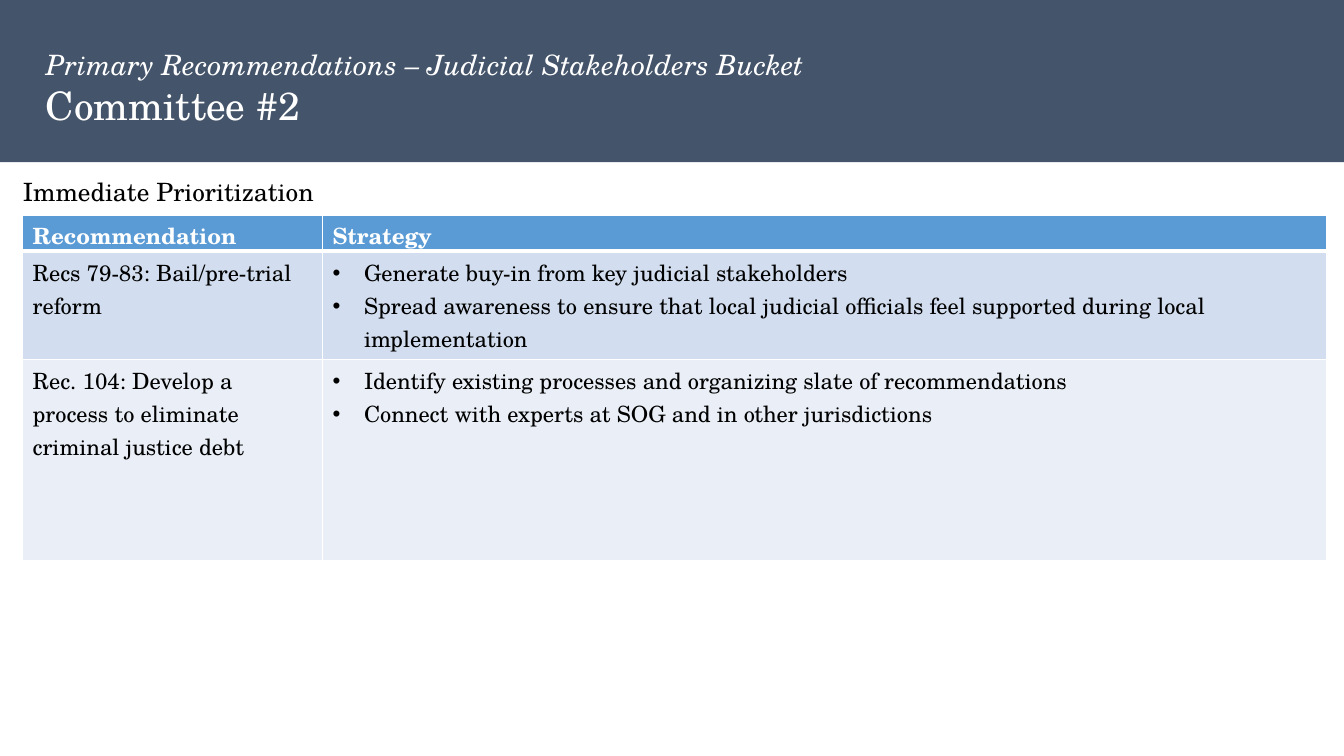
from lxml.etree import SubElement
from pptx import Presentation
from pptx.dml.color import RGBColor
from pptx.enum.shapes import MSO_SHAPE
from pptx.oxml.ns import qn
from pptx.util import Cm, Pt

# Content (a no-break space keeps "local implementation" on one line)
TITLE_LINES = [
    ("Primary Recommendations – Judicial Stakeholders Bucket", 20, True),
    ("Committee #2", 28, False),
]
SUBTITLE = "Immediate Prioritization"
HEADINGS = ["Recommendation", "Strategy"]
RECOMMENDATIONS = [
    ("Recs 79-83: Bail/pre-trial reform", [
        "Generate buy-in from key judicial stakeholders",
        "Spread awareness to ensure that local judicial officials feel supported during local implementation",
    ]),
    ("Rec. 104: Develop a process to eliminate criminal justice debt", [
        "Identify existing processes and organizing slate of recommendations",
        "Connect with experts at SOG and in other jurisdictions",
    ]),
]

# Style
FONT = "TeX Gyre Schola"
COLORS = {"banner": "44546A", "heading": "5B9BD5", "odd": "D2DEEF",
          "even": "EAEFF7", "white": "FFFFFF", "black": "000000"}
COLUMN_WIDTHS = [Cm(7.56), Cm(25.3)]
ROW_HEIGHTS = [Cm(0.89), Cm(2.72), Cm(5.08)]
BULLET_INDENT = Cm(0.79)


def color(name):
    return RGBColor.from_string(COLORS[name])


def add_span(para, text, size, ink, bold=False, italic=False):
    span = para.add_run()
    span.text = text
    span.font.name = FONT
    span.font.size = Pt(size)
    span.font.bold = bold
    span.font.italic = italic
    span.font.color.rgb = color(ink)


def add_bullet(para):
    properties = para._p.get_or_add_pPr()
    properties.set("marL", str(BULLET_INDENT))
    properties.set("indent", str(-BULLET_INDENT))
    SubElement(properties, qn("a:buFont")).set("typeface", "Arial")
    SubElement(properties, qn("a:buChar")).set("char", "•")


def add_borders(cell, widths):
    properties = cell._tc.get_or_add_tcPr()
    for position, (side, points) in enumerate(widths.items()):
        line = properties.makeelement(qn(f"a:ln{side}"), {"w": str(Pt(points))})
        fill = SubElement(line, qn("a:solidFill"))
        SubElement(fill, qn("a:srgbClr")).set("val", COLORS["white"])
        properties.insert(position, line)


def fill_cell(cell, lines, fill, ink, widths, bold=False, bulleted=False):
    cell.fill.solid()
    cell.fill.fore_color.rgb = color(fill)
    add_borders(cell, widths)
    frame = cell.text_frame
    for index, text in enumerate(lines):
        para = frame.add_paragraph() if index else frame.paragraphs[0]
        if bulleted:
            add_bullet(para)
        add_span(para, text, 16, ink, bold)


deck = Presentation()
deck.slide_width, deck.slide_height = Cm(33.87), Cm(19.05)
page = deck.slides.add_slide(deck.slide_layouts[6])

# Banner
banner = page.shapes.add_shape(MSO_SHAPE.RECTANGLE, 0, 0, deck.slide_width, Cm(4.09))
banner.shadow.inherit = False
banner.fill.solid()
banner.fill.fore_color.rgb = color("banner")
banner.line.fill.background()

# Title
title = page.shapes.add_textbox(Cm(0.91), Cm(1.07), Cm(19.81), Cm(2.31)).text_frame
title.word_wrap = False
for index, (text, size, italic) in enumerate(TITLE_LINES):
    para = title.add_paragraph() if index else title.paragraphs[0]
    add_span(para, text, size, "white", italic=italic)

# Table
table = page.shapes.add_table(
    len(ROW_HEIGHTS), len(COLUMN_WIDTHS), Cm(0.57), Cm(5.44),
    sum(COLUMN_WIDTHS), sum(ROW_HEIGHTS)).table
for column, width in zip(table.columns, COLUMN_WIDTHS):
    column.width = width
for row, height in zip(table.rows, ROW_HEIGHTS):
    row.height = height

for index, heading in enumerate(HEADINGS):
    cell = table.cell(0, index)
    cell.margin_top, cell.margin_bottom = Cm(0.05), 0
    fill_cell(cell, [heading], "heading", "white",
              {"L": 1, "R": 1, "T": 1, "B": 3}, bold=True)
for index, (recommendation, strategies) in enumerate(RECOMMENDATIONS, start=1):
    fill = "odd" if index % 2 else "even"
    widths = {"L": 1, "R": 1, "T": 3 if index == 1 else 1, "B": 1}
    fill_cell(table.cell(index, 0), [recommendation], fill, "black", widths)
    fill_cell(table.cell(index, 1), strategies, fill, "black", widths, bulleted=True)

# Subtitle
subtitle = page.shapes.add_textbox(Cm(0.33), Cm(4.32), Cm(17.93), Cm(1.02)).text_frame
subtitle.word_wrap = True
add_span(subtitle.paragraphs[0], SUBTITLE, 18, "black")

deck.save("out.pptx")
